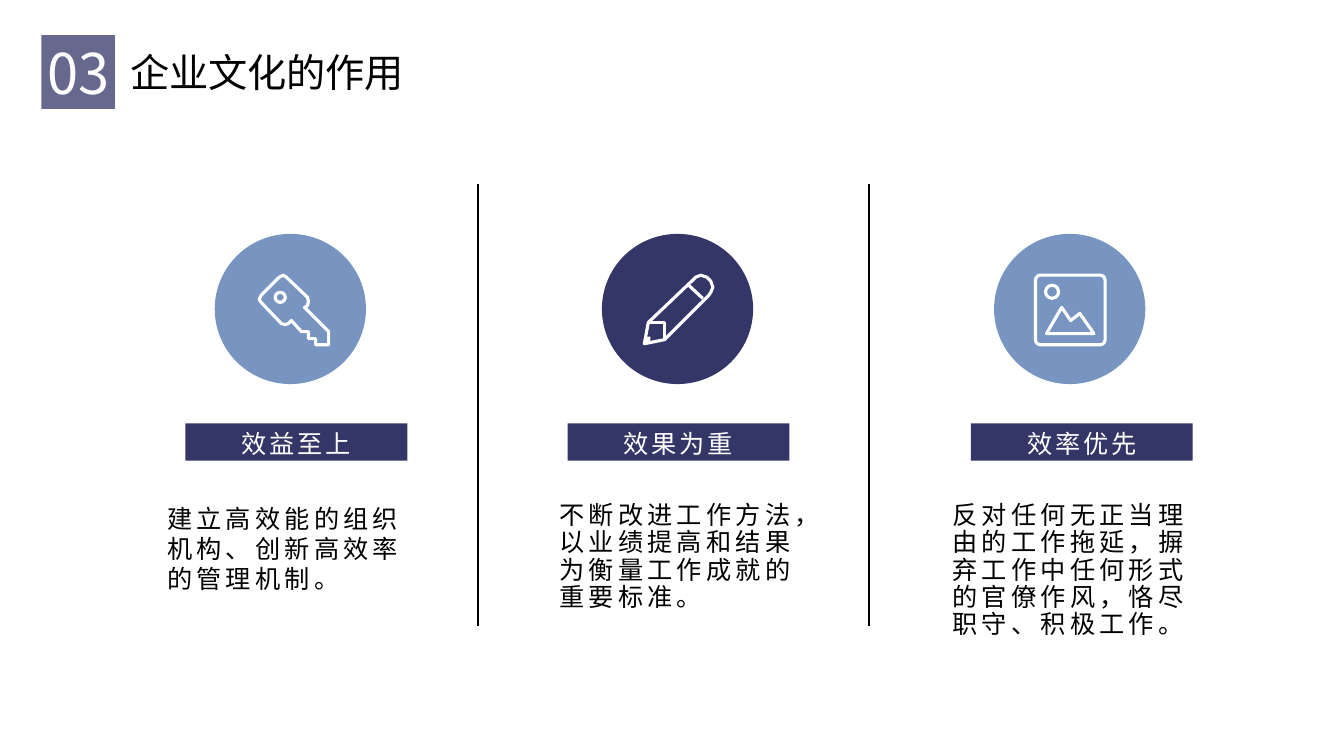
from collections.abc import Sequence
from dataclasses import dataclass

from lxml import etree
from pptx import Presentation
from pptx.dml.color import RGBColor
from pptx.enum.shapes import MSO_CONNECTOR, MSO_SHAPE
from pptx.enum.text import MSO_ANCHOR, MSO_AUTO_SIZE, PP_ALIGN
from pptx.oxml.ns import qn
from pptx.util import Inches, Pt

RECTANGLE = MSO_SHAPE.RECTANGLE
ROUNDED = MSO_SHAPE.ROUNDED_RECTANGLE
OVAL = MSO_SHAPE.OVAL
STRAIGHT = MSO_CONNECTOR.STRAIGHT
LEFT, CENTER = PP_ALIGN.LEFT, PP_ALIGN.CENTER
TOP, MIDDLE = MSO_ANCHOR.TOP, MSO_ANCHOR.MIDDLE
NO_AUTOFIT = MSO_AUTO_SIZE.NONE

NAVY = RGBColor(0x34, 0x36, 0x67)
BLUE = RGBColor(0x77, 0x95, 0xC0)
WHITE = RGBColor(0xFF, 0xFF, 0xFF)
BLACK = RGBColor(0x00, 0x00, 0x00)

FONT = "Noto Sans CJK SC"
TITLE_ONLY = 5
ICON_TOP = 2.72
ICON_UNIT = 0.01
ICON_STROKE = Pt(2.25)

Point = tuple[int, int]


@dataclass(frozen=True)
class Outline:
    """A stroked icon line, in hundredths of an inch."""
    points: Sequence[Point]
    closed: bool = True
    filled: bool = False


@dataclass(frozen=True)
class Frame:
    """A stroked preset shape of an icon, in hundredths of an inch."""
    kind: MSO_SHAPE
    left: int
    top: int
    size: int


@dataclass(frozen=True)
class Column:
    heading: str
    body: str
    color: RGBColor
    circle_left: float
    icon_left: float
    heading_left: float
    body_left: float
    line_spacing: float
    icon: Sequence[Outline | Frame]


KEY = (
    Outline(((21, 3), (25, 1), (28, 3), (49, 23), (50, 27), (49, 31), (46, 33),
             (70, 57), (70, 70), (57, 70), (57, 64), (50, 64), (50, 57),
             (43, 57), (33, 46), (30, 49), (27, 50), (23, 49), (3, 28),
             (1, 25), (3, 21))),
    Frame(OVAL, 17, 18, 10),
)
PENCIL = (
    Outline(((50, 6), (53, 3), (58, 1), (64, 3), (68, 7), (70, 13), (68, 18),
             (66, 21), (22, 65), (2, 69), (6, 48))),
    Outline(((46, 11), (60, 24)), closed=False),
    Outline(((6, 48), (22, 48), (22, 65)), closed=False),
    Outline(((2, 69), (5, 62), (8, 62), (8, 66)), filled=True),
)
LANDSCAPE = (
    Frame(ROUNDED, 1, 1, 69),
    Frame(OVAL, 11, 11, 13),
    Outline(((12, 59), (27, 33), (36, 46), (45, 39), (59, 59))),
)

COLUMNS = (
    Column("效益至上", "建立高效能的组织机构、创新高效率的管理机制。",
           BLUE, 2.13, 2.56, 1.84, 1.56, 1.0, KEY),
    Column("效果为重", "不断改进工作方法，以业绩提高和结果为衡量工作成就的重要标准。",
           NAVY, 5.97, 6.37, 5.63, 5.45, 0.9, PENCIL),
    Column("效率优先", "反对任何无正当理由的工作拖延，摒弃工作中任何形式的官僚作风，恪尽职守、积极工作。",
           BLUE, 9.86, 10.26, 9.63, 9.35, 0.9, LANDSCAPE),
)
DIVIDERS = (4.74, 8.62)


def write(box, text: str, size: int, color: RGBColor, align=LEFT,
          anchor=TOP, tracking: int = 0):
    """Put one formatted paragraph in a box and return it."""
    frame = box.text_frame
    frame.word_wrap = True
    frame.auto_size = NO_AUTOFIT
    frame.vertical_anchor = anchor
    para = frame.paragraphs[0]
    para.alignment = align
    span = para.add_run()
    span.text = text
    span.font.size = Pt(size)
    span.font.color.rgb = color
    span.font.name = FONT
    properties = span._r.get_or_add_rPr()
    etree.SubElement(properties, qn("a:ea"), typeface=FONT)
    if tracking:
        properties.set("spc", str(tracking * 100))
    return para


def add_filled(page, kind, left: float, top: float, width: float,
               height: float, color: RGBColor):
    shape = page.shapes.add_shape(
        kind, Inches(left), Inches(top), Inches(width), Inches(height))
    shape.shadow.inherit = False
    shape.fill.solid()
    shape.fill.fore_color.rgb = color
    shape.line.fill.background()
    return shape


def add_divider(page, x: float) -> None:
    line = page.shapes.add_connector(
        STRAIGHT, Inches(x), Inches(1.83), Inches(x), Inches(6.21))
    line.line.color.rgb = BLACK
    line.line.width = Pt(1)
    etree.SubElement(line._element.spPr, qn("a:effectLst"))


def add_icon_part(page, part: Outline | Frame, icon_left: float) -> None:
    if isinstance(part, Frame):
        side = Inches(part.size * ICON_UNIT)
        shape = page.shapes.add_shape(
            part.kind, Inches(icon_left + part.left * ICON_UNIT),
            Inches(ICON_TOP + part.top * ICON_UNIT), side, side)
        if part.kind == ROUNDED:
            shape.adjustments[0] = 0.07
    else:
        builder = page.shapes.build_freeform(
            *part.points[0], scale=Inches(ICON_UNIT))
        builder.add_line_segments(part.points[1:], close=part.closed)
        shape = builder.convert_to_shape(Inches(icon_left), Inches(ICON_TOP))
    shape.shadow.inherit = False
    if isinstance(part, Outline) and part.filled:
        shape.fill.solid()
        shape.fill.fore_color.rgb = WHITE
        shape.line.fill.background()
    else:
        shape.fill.background()
        shape.line.color.rgb = WHITE
        shape.line.width = ICON_STROKE


def add_column(page, column: Column) -> None:
    add_filled(page, OVAL, column.circle_left, 2.32, 1.5, 1.49, column.color)
    for part in column.icon:
        add_icon_part(page, part, column.icon_left)
    heading = add_filled(page, RECTANGLE, column.heading_left, 4.2, 2.2, 0.37, NAVY)
    write(heading, column.heading, 18, WHITE, CENTER, tracking=2)
    body = page.shapes.add_textbox(
        Inches(column.body_left), Inches(4.94), Inches(2.76), Inches(0.62))
    para = write(body, column.body, 18, BLACK, tracking=3)
    para.line_spacing = column.line_spacing
    para.space_after = Pt(8)


def main() -> None:
    deck = Presentation()
    deck.slide_width, deck.slide_height = Inches(13.33), Inches(7.5)
    page = deck.slides.add_slide(deck.slide_layouts[TITLE_ONLY])

    # Section number and title
    badge = add_filled(page, RECTANGLE, 0.41, 0.35, 0.73, 0.73, NAVY)
    fill_color = badge._element.spPr.find(qn("a:solidFill"))[0]
    etree.SubElement(fill_color, qn("a:alpha"), val="75000")
    badge.text_frame.margin_left = badge.text_frame.margin_right = 0
    write(badge, "03", 40, WHITE, CENTER, MIDDLE)
    title = page.shapes.title
    title.left, title.top = Inches(1.19), Inches(0.43)
    title.width, title.height = Inches(3.23), Inches(0.57)
    write(title, "企业文化的作用", 28, BLACK)

    # Three columns and the lines between them
    for x in DIVIDERS:
        add_divider(page, x)
    for column in COLUMNS:
        add_column(page, column)

    deck.save("out.pptx")


if __name__ == "__main__":
    main()
